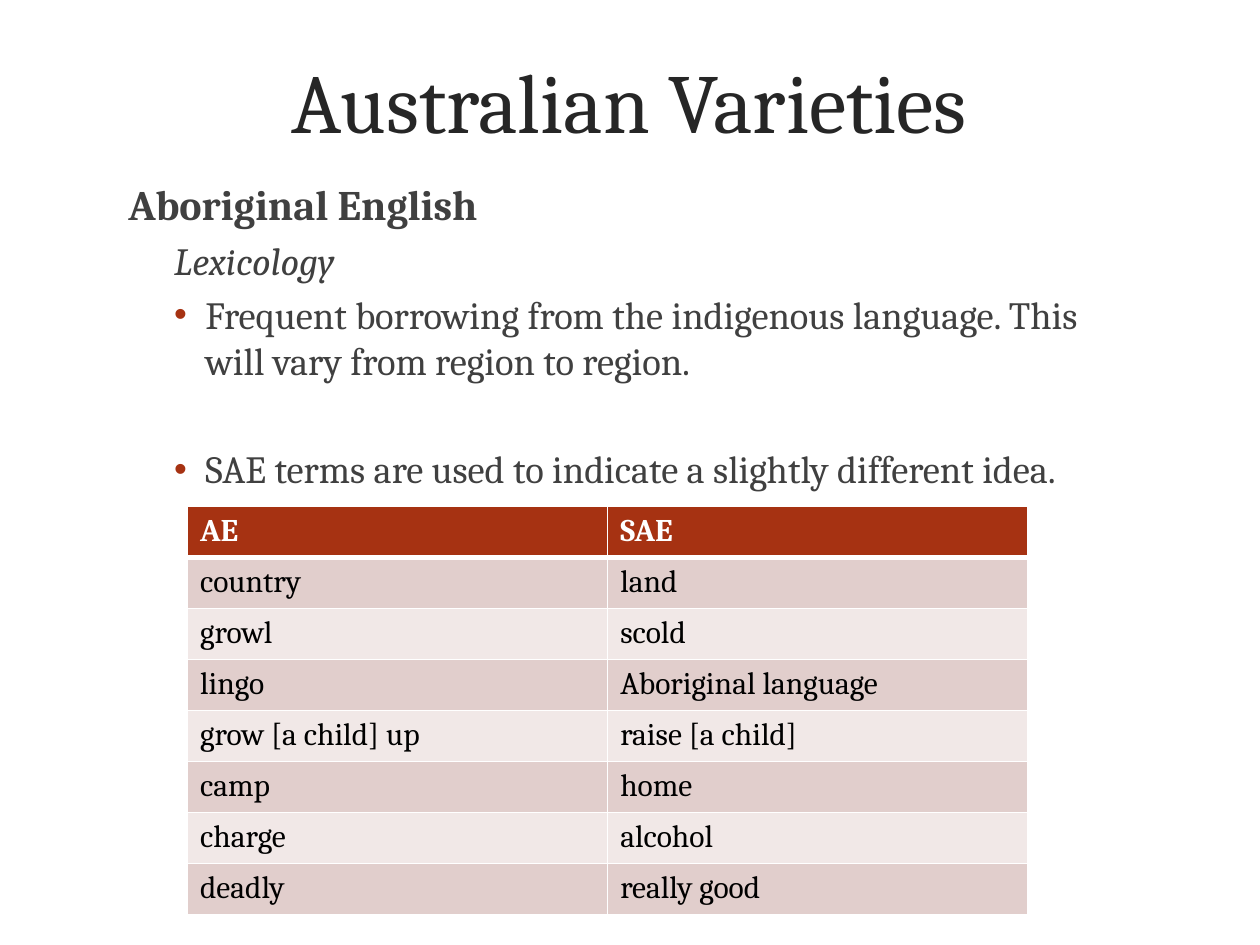
from pptx import Presentation, util as u
from pptx.dml.color import RGBColor
from pptx.enum import text as t
from pptx.oxml import parse_xml
from pptx.oxml.ns import nsdecls

THEME = dict(
    font="Cambria", title="262626", body="404040", accent="A63212",
    white="FFFFFF", cell="000000", bands=("E1CECC", "F1E8E7"),
    title_size=48, heading_size=24, body_size=22, cell_size=18,
)

TITLE = "Australian Varieties"
HEADING = "Aboriginal English"
TOPIC = "Lexicology"
POINTS = [
    ("Frequent borrowing from the indigenous language. This will vary from region to region.", 4.5),
    ("SAE terms are used to indicate a slightly different idea.", 35.3),
]
TERMS = [
    ("AE", "SAE"),
    ("country", "land"),
    ("growl", "scold"),
    ("lingo", "Aboriginal language"),
    ("grow [a child] up", "raise [a child]"),
    ("camp", "home"),
    ("charge", "alcohol"),
    ("deadly", "really good"),
]

TITLE_BOX = (1.52, 0, 22.33, 4.01)
BODY_BOX = (2.34, 3.48, 20.75, 13.18)
TABLE_BOX = (3.78, 10.21, 16.94, 8.23)


def cm(box):
    return [u.Cm(length) for length in box]


def write(paragraph, words, size, color, bold=False, italic=False, align=None,
          before=0, left=0, hanging=0, bullet=False):
    paragraph.alignment = align
    paragraph.space_before = u.Pt(before)
    properties = paragraph._p.get_or_add_pPr()
    properties.set("marL", str(u.Cm(left)))
    properties.set("indent", str(-u.Cm(hanging)))
    marks = [
        f'<a:buClr {nsdecls("a")}><a:srgbClr val="{THEME["accent"]}"/></a:buClr>',
        f'<a:buSzPct {nsdecls("a")} val="95000"/>',
        f'<a:buFont {nsdecls("a")} typeface="Arial"/>',
        f'<a:buChar {nsdecls("a")} char="•"/>',
    ] if bullet else [f'<a:buNone {nsdecls("a")}/>']
    for mark in marks:
        properties.append(parse_xml(mark))
    run = paragraph.add_run()
    run.text = words
    run.font.name = THEME["font"]
    run.font.size = u.Pt(size)
    run.font.bold, run.font.italic = bold, italic
    run.font.color.rgb = RGBColor.from_string(color)


def add_borders(cell, **widths):
    properties = cell._tc.get_or_add_tcPr()
    for index, side in enumerate("LRTB"):
        properties.insert(index, parse_xml(
            f'<a:ln{side} {nsdecls("a")} w="{u.Pt(widths.get(side, 1))}"><a:solidFill>'
            f'<a:srgbClr val="{THEME["white"]}"/></a:solidFill></a:ln{side}>'))


def add_title(slide):
    title = slide.shapes.title
    title.left, title.top, title.width, title.height = cm(TITLE_BOX)
    frame = title.text_frame
    frame.auto_size = t.MSO_AUTO_SIZE.NONE
    frame.vertical_anchor = t.MSO_ANCHOR.MIDDLE
    write(frame.paragraphs[0], TITLE, THEME["title_size"], THEME["title"],
          align=t.PP_ALIGN.CENTER)


def add_body(slide):
    frame = slide.shapes.add_textbox(*cm(BODY_BOX)).text_frame
    frame.word_wrap = True
    write(frame.paragraphs[0], HEADING, THEME["heading_size"], THEME["body"], bold=True)
    write(frame.add_paragraph(), TOPIC, THEME["body_size"], THEME["body"],
          italic=True, before=4.5, left=0.92)
    for point, before in POINTS:
        write(frame.add_paragraph(), point, THEME["body_size"], THEME["body"],
              before=before, left=1.55, hanging=0.63, bullet=True)


def add_terms(slide):
    terms = slide.shapes.add_table(len(TERMS), len(TERMS[0]), *cm(TABLE_BOX)).table
    for row, pair in enumerate(TERMS):
        header = row == 0
        fill = THEME["accent"] if header else THEME["bands"][(row - 1) % 2]
        for column, term in enumerate(pair):
            cell = terms.cell(row, column)
            cell.fill.solid()
            cell.fill.fore_color.rgb = RGBColor.from_string(fill)
            write(cell.text_frame.paragraphs[0], term, THEME["cell_size"],
                  THEME["white"] if header else THEME["cell"], bold=header)
            add_borders(cell, B=3 if header else 1, T=3 if row == 1 else 1)


def main():
    deck = Presentation()
    deck.slide_width, deck.slide_height = cm((25.4, 19.05))
    slide = deck.slides.add_slide(deck.slide_layouts[5])
    add_title(slide)
    add_body(slide)
    add_terms(slide)
    deck.save("out.pptx")


if __name__ == "__main__":
    main()
